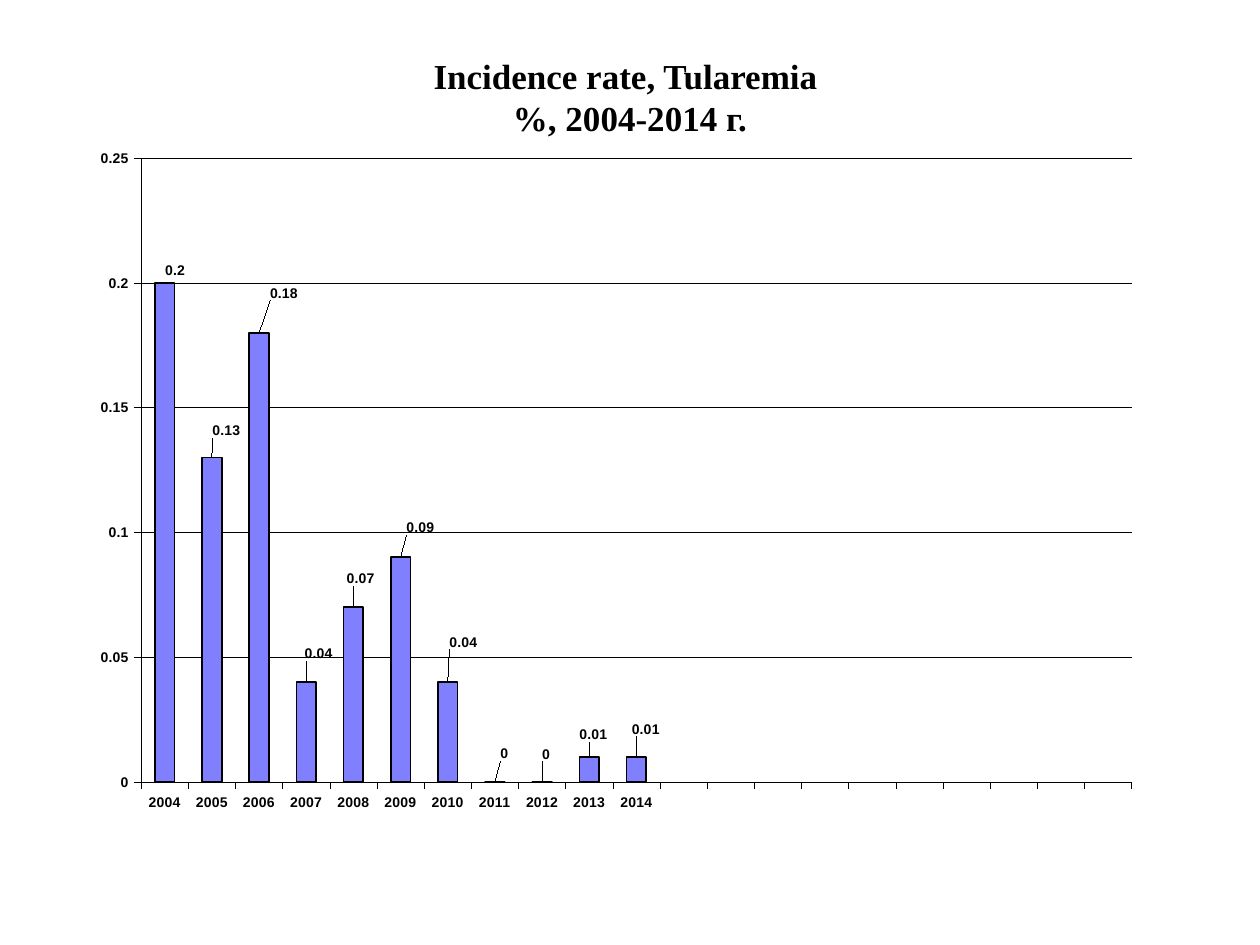
"""Build a slide with a column chart of tularemia incidence, 2004-2014."""
from lxml import etree
from pptx import Presentation
from pptx.chart.data import CategoryChartData
from pptx.dml.color import RGBColor
from pptx.enum.chart import XL_CHART_TYPE, XL_LABEL_POSITION, XL_TICK_LABEL_POSITION, XL_TICK_MARK
from pptx.enum.text import MSO_ANCHOR, MSO_AUTO_SIZE, PP_ALIGN
from pptx.oxml.ns import qn
from pptx.util import Cm, Pt

COLORS = {"ink": "000000", "bar": "8080FF"}
RATES = [0.2, 0.13, 0.18, 0.04, 0.07, 0.09, 0.04, 0, 0, 0.01, 0.01]
EMPTY_SLOTS = 10
LABEL_SHIFTS = [(1, 0), (1.4, -2.1), (2.4, -4.1), (1.2, -2.4), (0.7, -2.4), (1.9, -2.6),
                (1.5, -4.1), (0.9, -2.4), (0.4, -2.3), (0.4, -1.5), (0.9, -2.3)]


def set_font(font, name, size):
    font.name, font.size, font.bold = name, Pt(size), True
    font.color.rgb = RGBColor.from_string(COLORS["ink"])


def make_layout(**values):
    layout = etree.Element(qn("c:layout"))
    manual = etree.SubElement(layout, qn("c:manualLayout"))
    for tag, value in values.items():
        etree.SubElement(manual, qn(f"c:{tag}")).set("val", str(value))
    return layout


prs = Presentation()
prs.slide_width, prs.slide_height = Cm(25.4), Cm(19.05)
s = prs.slides.add_slide(prs.slide_layouts[0])
subtitle = s.placeholders[1].element
subtitle.getparent().remove(subtitle)

title = s.shapes.title
title.left, title.top, title.width, title.height = Cm(1.9), Cm(0.95), Cm(21.6), Cm(2)
tf = title.text_frame
tf.text = "Incidence rate, Tularemia \v%, 2004-2014 г."
tf.vertical_anchor = MSO_ANCHOR.MIDDLE
tf.auto_size = MSO_AUTO_SIZE.NONE
p = tf.paragraphs[0]
p.alignment = PP_ALIGN.CENTER
set_font(p.font, "Times New Roman", 20)

data = CategoryChartData()
data.categories = [str(2004 + i) for i in range(len(RATES))] + [""] * EMPTY_SLOTS
data.add_series("Series 1", RATES + [None] * EMPTY_SLOTS)
chart = s.shapes.add_chart(XL_CHART_TYPE.COLUMN_CLUSTERED, Cm(1.9), Cm(2.92), Cm(21), Cm(13.41), data).chart
chart.has_legend = False
chart.has_title = False
set_font(chart.font, "Arial", 8)

plot_area = chart.plots[0]
plot_area.gap_width = 140
plot_area.vary_by_categories = False
for axis in (chart.category_axis, chart.value_axis):
    axis.major_tick_mark = XL_TICK_MARK.OUTSIDE
    axis.minor_tick_mark = XL_TICK_MARK.NONE
    set_font(axis.tick_labels.font, "Arial", 8)
    axis.format.line.width = Pt(0.25)
    axis.format.line.color.rgb = RGBColor.from_string(COLORS["ink"])
chart.category_axis.tick_label_position = XL_TICK_LABEL_POSITION.LOW
axis = chart.value_axis
axis.minimum_scale, axis.maximum_scale, axis.major_unit = 0, 0.25, 0.05
axis.has_major_gridlines = True
axis.major_gridlines.format.line.width = Pt(0.25)
axis.major_gridlines.format.line.color.rgb = RGBColor.from_string(COLORS["ink"])

series = plot_area.series[0]
series.invert_if_negative = False
series.format.fill.solid()
series.format.fill.fore_color.rgb = RGBColor.from_string(COLORS["bar"])
series.format.line.width = Pt(1)
series.format.line.color.rgb = RGBColor.from_string(COLORS["ink"])
labels = series.data_labels
labels.show_value = True
labels.position = XL_LABEL_POSITION.OUTSIDE_END
set_font(labels.font, "Arial", 8)
for i in range(len(RATES)):
    label = series.points[i].data_label
    label.position = XL_LABEL_POSITION.OUTSIDE_END
    set_font(label.font, "Arial", 8)
for node, (dx, dy) in zip(series._element.iter(qn("c:dLbl")), LABEL_SHIFTS):
    node.find(qn("c:idx")).addnext(make_layout(x=dx / 100, y=dy / 100))

area = chart._chartSpace.find(".//" + qn("c:plotArea"))
for old in area.findall(qn("c:layout")):
    area.remove(old)
area.insert(0, make_layout(layoutTarget="inner", xMode="edge", yMode="edge", x=0.045, y=0.02, w=0.951, h=0.94))

prs.save("out.pptx")
